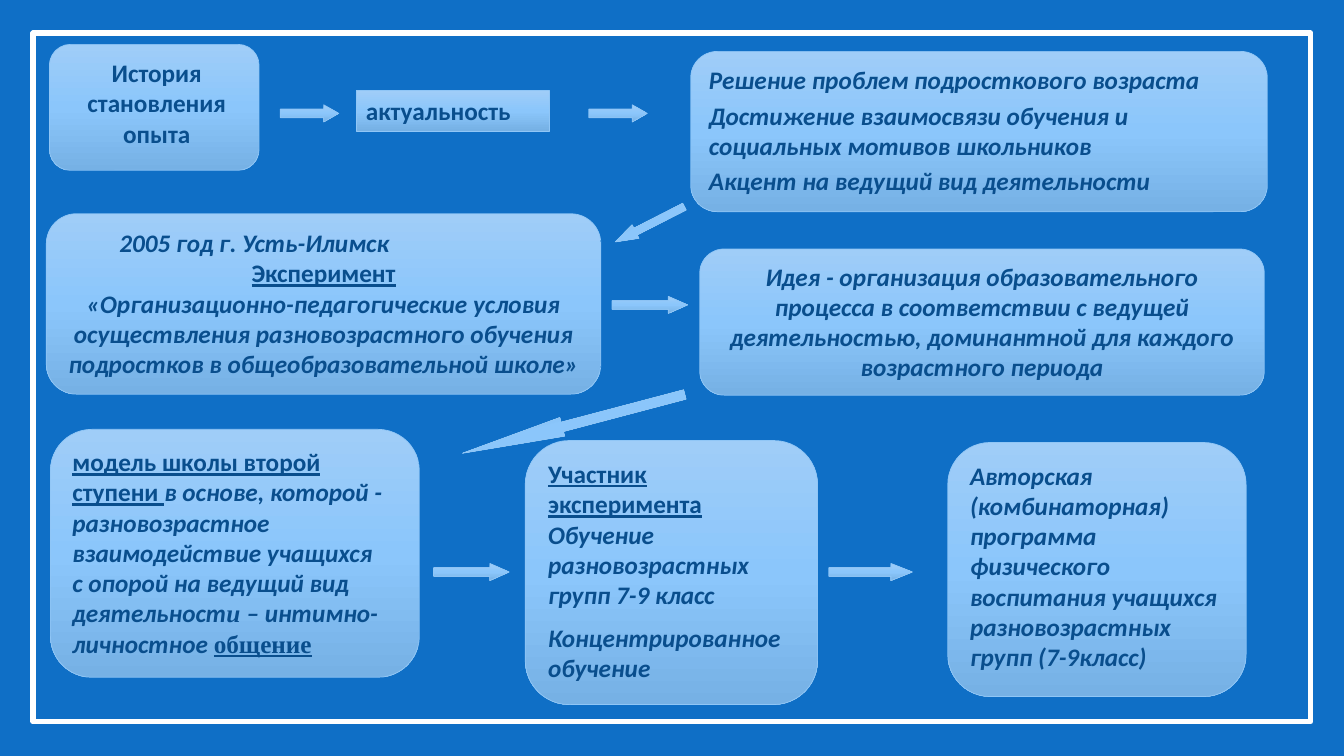
from copy import deepcopy
from dataclasses import dataclass

from pptx import Presentation
from pptx.dml.color import RGBColor
from pptx.enum.shapes import MSO_SHAPE
from pptx.enum.text import MSO_ANCHOR, MSO_AUTO_SIZE, PP_ALIGN
from pptx.oxml import parse_xml
from pptx.oxml.ns import nsdecls, qn
from pptx.util import Inches, Pt

RECT = MSO_SHAPE.RECTANGLE
ROUND = MSO_SHAPE.ROUNDED_RECTANGLE
ARROW = MSO_SHAPE.RIGHT_ARROW
LEFT, CENTER = PP_ALIGN.LEFT, PP_ALIGN.CENTER
TOP, NO_FIT = MSO_ANCHOR.TOP, MSO_AUTO_SIZE.NONE

BACKGROUND, FRAME, TEXT, EDGE = "0F6FC6", "FFFFFF", "094E8D", "90C6F6"
GRADIENT = ((0, "9FCDF8"), (0.5, "8BC6FB"), (1, "76B1E5"))
SERIF = "Times New Roman"


@dataclass
class Span:
    text: str
    italic: bool = True
    underline: bool = False
    font: str = "Calibri"


@dataclass
class Para:
    spans: list[Span]
    align: int = LEFT
    before: float = 0
    indent: float = 0


@dataclass
class Panel:
    left: float
    top: float
    width: float
    height: float
    paras: list[Para]
    shape: int = ROUND


@dataclass
class Arrow:
    left: float
    top: float
    width: float
    height: float
    head: float
    rotation: float = 0


def rgb(value: str) -> RGBColor:
    return RGBColor.from_string(value)


def add_shape(slide, kind, left: float, top: float, width: float, height: float):
    sp = slide.shapes.add_shape(kind, Inches(left), Inches(top), Inches(width), Inches(height))
    sp.shadow.inherit = False
    return sp


def style(sp) -> None:
    """Blue three-stop gradient with a thin pale edge."""
    sp.fill.gradient()
    sp.fill.gradient_angle = 270
    stops = sp._element.spPr.find(qn("a:gradFill")).find(qn("a:gsLst"))
    stops.append(deepcopy(stops[-1]))
    for stop, (position, color) in zip(sp.fill.gradient_stops, GRADIENT):
        stop.position = position
        stop.color.rgb = rgb(color)
    sp.line.color.rgb = rgb(EDGE)
    sp.line.width = Pt(0.5)


def write(sp, paras: list[Para]) -> None:
    tf = sp.text_frame
    tf.word_wrap, tf.auto_size, tf.vertical_anchor = True, NO_FIT, TOP
    for i, para in enumerate(paras):
        p = tf.add_paragraph() if i else tf.paragraphs[0]
        p.alignment, p.space_before = para.align, Pt(para.before)
        pPr = p._p.get_or_add_pPr()
        pPr.set("marL", str(Inches(para.indent)))
        pPr.set("indent", "0")
        pPr.append(parse_xml(f"<a:buNone {nsdecls('a')}/>"))
        for span in para.spans:
            for n, line in enumerate(span.text.split("\n")):
                if n:
                    p.add_line_break()
                r = p.add_run()
                r.text = line
                r.font.name, r.font.size, r.font.bold = span.font, Pt(18), True
                r.font.italic, r.font.underline = span.italic, span.underline
                r.font.color.rgb = rgb(TEXT)


def add_panel(slide, panel: Panel) -> None:
    sp = add_shape(slide, panel.shape, panel.left, panel.top, panel.width, panel.height)
    style(sp)
    write(sp, panel.paras)


def add_arrow(slide, arrow: Arrow) -> None:
    sp = add_shape(slide, ARROW, arrow.left, arrow.top, arrow.width, arrow.height)
    sp.adjustments[0], sp.adjustments[1] = 0.5, arrow.head
    sp.rotation = arrow.rotation
    style(sp)


def fill_placeholder(slide, panel: Panel) -> None:
    """Place a template placeholder in front of its panel."""
    sp = slide.placeholders[1] if len(panel.paras) > 1 else slide.shapes.title
    sp.left, sp.top = Inches(panel.left), Inches(panel.top)
    sp.width, sp.height = Inches(panel.width), Inches(panel.height)
    write(sp, panel.paras)
    slide.shapes._spTree.append(sp._element)


PANELS = [
    Panel(0.49, 0.44, 2.08, 1.25, []),
    Panel(6.85, 0.51, 5.72, 1.59, []),
    Panel(3.53, 0.9, 1.92, 0.4, [Para([Span("актуальность", italic=False)])], RECT),
    Panel(0.46, 2.12, 5.5, 1.79, [
        Para([Span("2005 год г. Усть-Илимск")], indent=0.54),
        Para([Span("Эксперимент", italic=False, underline=True)], CENTER),
        Para([Span("«Организационно-педагогические условия осуществления "
                   "разновозрастного обучения подростков в общеобразовательной школе»")], CENTER),
    ]),
    Panel(6.94, 2.47, 5.6, 1.45, [
        Para([Span("Идея - организация образовательного процесса в соответствии с ведущей "
                   "деятельностью, доминантной для каждого возрастного периода")], CENTER),
    ]),
    Panel(0.5, 4.26, 3.66, 2.46, [Para([
        Span("модель школы второй ступени ", italic=False, underline=True),
        Span("в основе, которой - разновозрастное взаимодействие учащихся \n"
             "с опорой на ведущий вид деятельност"),
        Span("и ", font=SERIF),
        Span("– интимно-личностное "),
        Span("общение", italic=False, underline=True, font=SERIF),
    ])]),
    Panel(5.21, 4.37, 2.9, 2.62, [
        Para([Span("Участник эксперимента", italic=False, underline=True)]),
        Para([Span("Обучение разновозрастных групп 7-9 класс")]),
        Para([Span("Концентрированное обучение")], before=9),
    ]),
    Panel(9.4, 4.39, 2.96, 2.52, [
        Para([Span("Авторская (комбинаторная) программа физического воспитания "
                   "учащихся разновозрастных групп (7-9класс)")]),
    ]),
]

ARROWS = [
    Arrow(2.78, 1.04, 0.58, 0.17, 0.875),
    Arrow(5.84, 1.04, 0.58, 0.17, 0.875),
    Arrow(6.06, 2.15, 0.77, 0.15, 1.5, 153),
    Arrow(6.07, 2.94, 0.75, 0.17, 1.125),
    Arrow(4.55, 4.11, 2.28, 0.19, 5.375, 165.2),
    Arrow(4.3, 5.59, 0.75, 0.17, 1.125),
    Arrow(8.22, 5.59, 0.83, 0.17, 1.25),
]

TITLE = Panel(0.64, 0.52, 1.83, 1, [Para([Span("История становления опыта", italic=False)], CENTER)])
GOALS = Panel(6.93, 0.59, 5.56, 1.43, [
    Para([Span(goal)], before=3.6) for goal in (
        "Решение проблем подросткового возраста",
        "Достижение взаимосвязи обучения и социальных мотивов школьников",
        "Акцент на ведущий вид деятельности",
    )
])


def main() -> None:
    prs = Presentation()
    prs.slide_width, prs.slide_height = Inches(13.33), Inches(7.5)
    slide = prs.slides.add_slide(prs.slide_layouts[1])

    # Background and frame
    slide.background.fill.solid()
    slide.background.fill.fore_color.rgb = rgb(BACKGROUND)
    frame = add_shape(slide, RECT, 0.33, 0.33, 12.67, 6.83)
    frame.fill.background()
    frame.line.color.rgb = rgb(FRAME)
    frame.line.width = Pt(4)

    # Flow of panels and arrows
    for panel in PANELS:
        add_panel(slide, panel)
    for arrow in ARROWS:
        add_arrow(slide, arrow)

    # Title and list of goals
    for text in (TITLE, GOALS):
        fill_placeholder(slide, text)

    prs.save("out.pptx")


if __name__ == "__main__":
    main()
